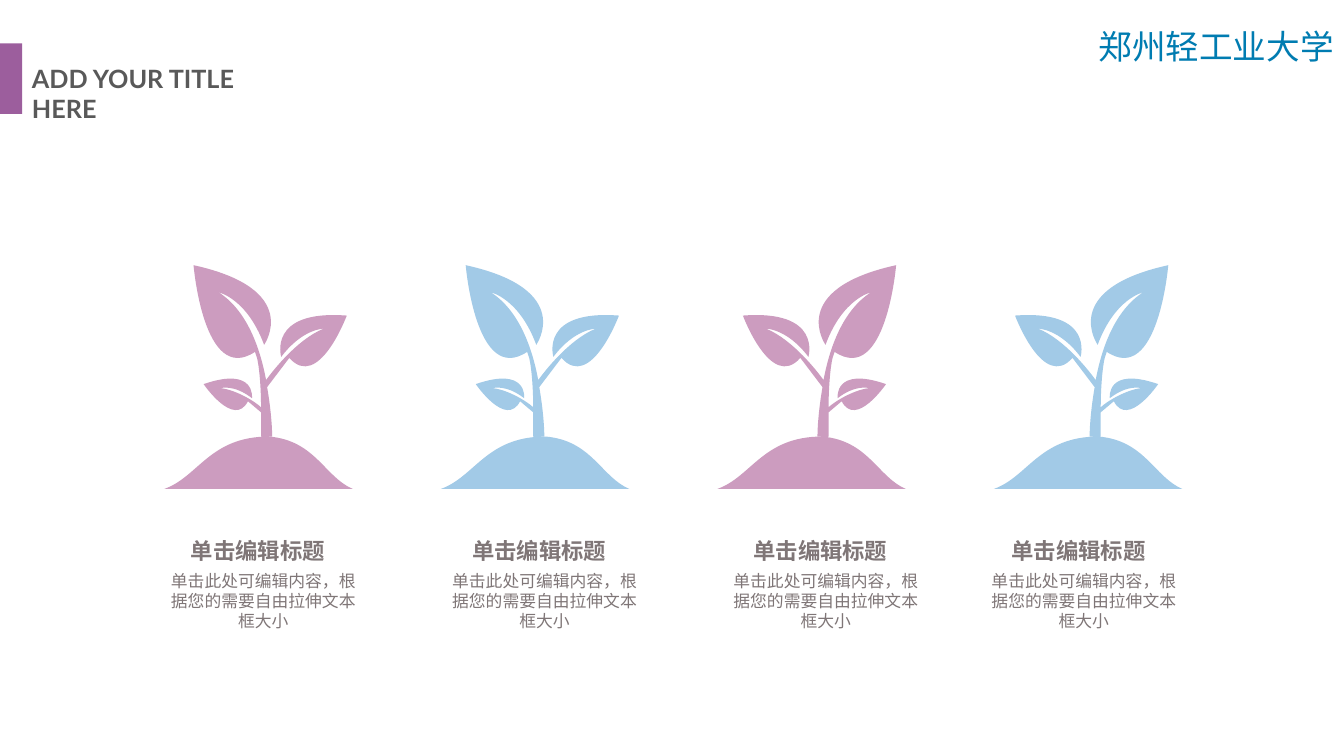
from dataclasses import dataclass

from lxml import etree
from pptx import Presentation
from pptx import util as u
from pptx.dml.color import RGBColor
from pptx.enum import shapes, text
from pptx.oxml import ns

PINK, BLUE, PURPLE = "CC9CBF", "A2CAE7", "9C5E9D"
GREY, DARK, TEAL = "7F7677", "595959", "007CB1"

# Outlines in hundredths of an inch: pairs are straight lines, sixes are curves
UNIT = 0.72
SPROUT_WIDTH = 152
SPROUT = [
    (87, 91), (108, 63, 129, 63, 129, 63), (102, 74, 77, 107, 72, 114),
    (66, 82, 53, 45, 25, 27), (25, 27, 53, 33, 70, 79),
    (70, 79, 109, 24, 0, 0), (0, 0, 10, 120, 61, 86), (63, 92),
    (65, 100, 67, 120, 67, 141), (62, 136, 43, 124, 27, 122),
    (27, 122, 40, 118, 58, 132), (58, 132, 62, 100, 10, 118),
    (10, 118, 40, 162, 54, 135), (67, 146), (67, 154, 67, 163, 67, 170),
    (68, 170, 69, 171, 71, 172), (73, 170, 75, 170, 78, 170),
    (78, 162, 77, 144, 73, 121), (95, 92), (124, 125, 152, 50, 152, 50),
    (73, 44, 87, 91, 87, 91),
]
MOUND = [(0, 52), (34, 40, 45, 0, 104, 0), (150, 4, 159, 40, 187, 52)]


@dataclass
class Plant:
    sprout_left: float
    caption_left: float
    color: str
    mirrored: bool


PLANTS = [
    Plant(138.24, 92.16, PINK, False),
    Plant(332.64, 293.04, BLUE, False),
    Plant(530.64, 493.92, PINK, True),
    Plant(725.04, 678.24, BLUE, True),
]
MOUND_LEFT, MOUND_PITCH = 117.36, 197.52


def rgb(color: str) -> RGBColor:
    return RGBColor.from_string(color)


def paint(shape, color: str) -> None:
    shape.shadow.inherit = False
    shape.fill.solid()
    shape.fill.fore_color.rgb = rgb(color)
    shape.line.fill.background()


def add_outline(page, outline: list, left: float, top: float, color: str,
                mirror_width: float = 0) -> None:
    def local(x: float, y: float) -> tuple:
        across = mirror_width - x if mirror_width else x
        return u.Pt(UNIT * across), u.Pt(UNIT * y)

    anchors = []
    for segment in outline:
        x, y = local(*segment[-2:])
        anchors.append((u.Pt(left) + x, u.Pt(top) + y))
    builder = page.shapes.build_freeform(*anchors[0])
    builder.add_line_segments(anchors[1:], close=True)
    shape = builder.convert_to_shape()
    paint(shape, color)

    # Bend the straight segments that have control points
    lines = list(shape._element.iter(ns.qn("a:lnTo")))
    for line, segment in zip(lines, outline[1:]):
        if len(segment) == 2:
            continue
        line.tag = ns.qn("a:cubicBezTo")
        for position in (0, 2):
            x, y = local(*segment[position:position + 2])
            point = etree.Element(ns.qn("a:pt"), x=str(int(x)), y=str(int(y)))
            line.insert(position // 2, point)


def add_text(page, words: str, left: float, top: float, width: float,
             height: float, *, size: float, font: str, color: str,
             bold: bool = False, wrap: bool = True, centered: bool = False,
             insets: tuple = (0, 0, 0, 0)) -> None:
    box = page.shapes.add_textbox(
        u.Pt(left), u.Pt(top), u.Pt(width), u.Pt(height))
    frame = box.text_frame
    frame.word_wrap = wrap
    (frame.margin_left, frame.margin_top,
     frame.margin_right, frame.margin_bottom) = map(u.Pt, insets)
    para = frame.paragraphs[0]
    para.alignment = text.PP_ALIGN.CENTER if centered else text.PP_ALIGN.LEFT
    span = para.add_run()
    span.text = words
    span.font.size = u.Pt(size)
    span.font.name = font
    span.font.bold = bold
    span.font.color.rgb = rgb(color)
    east_asian = etree.SubElement(span.font._element, ns.qn("a:ea"))
    east_asian.set("typeface", font)


def main() -> None:
    deck = Presentation()
    deck.slide_width, deck.slide_height = u.Pt(960), u.Pt(540)
    page = deck.slides.add_slide(deck.slide_layouts[6])

    # Header
    add_text(page, "郑州轻工业大学", 777.6, 15.1, 182.4, 32.4, size=24,
             font="Noto Sans CJK SC", color=TEAL, wrap=False,
             insets=(7.2, 3.6, 7.2, 3.6))
    accent = page.shapes.add_shape(
        shapes.MSO_SHAPE.RECTANGLE, u.Pt(0), u.Pt(31), u.Pt(15.8), u.Pt(50.4))
    paint(accent, PURPLE)
    add_text(page, "ADD YOUR TITLE HERE", 15.8, 41.8, 208.8, 28.8, size=18,
             font="Lato", color=DARK, bold=True, insets=(7.2, 3.6, 20, 3.6))

    # Plants with captions
    for index, plant in enumerate(PLANTS):
        add_outline(page, MOUND, MOUND_LEFT + index * MOUND_PITCH, 311.8,
                    plant.color)
        add_outline(page, SPROUT, plant.sprout_left, 189.4, plant.color,
                    SPROUT_WIDTH if plant.mirrored else 0)
        add_text(page, "单击编辑标题", plant.caption_left, 383.8, 184.3, 19.4,
                 size=16, font="Arial", color=GREY, bold=True, centered=True)
        add_text(page, "单击此处可编辑内容，根据您的需要自由拉伸文本框大小",
                 plant.caption_left + 27.9, 407.5, 136.1, 43.9,
                 size=12, font="Arial", color=GREY, centered=True)

    deck.save("out.pptx")


if __name__ == "__main__":
    main()
